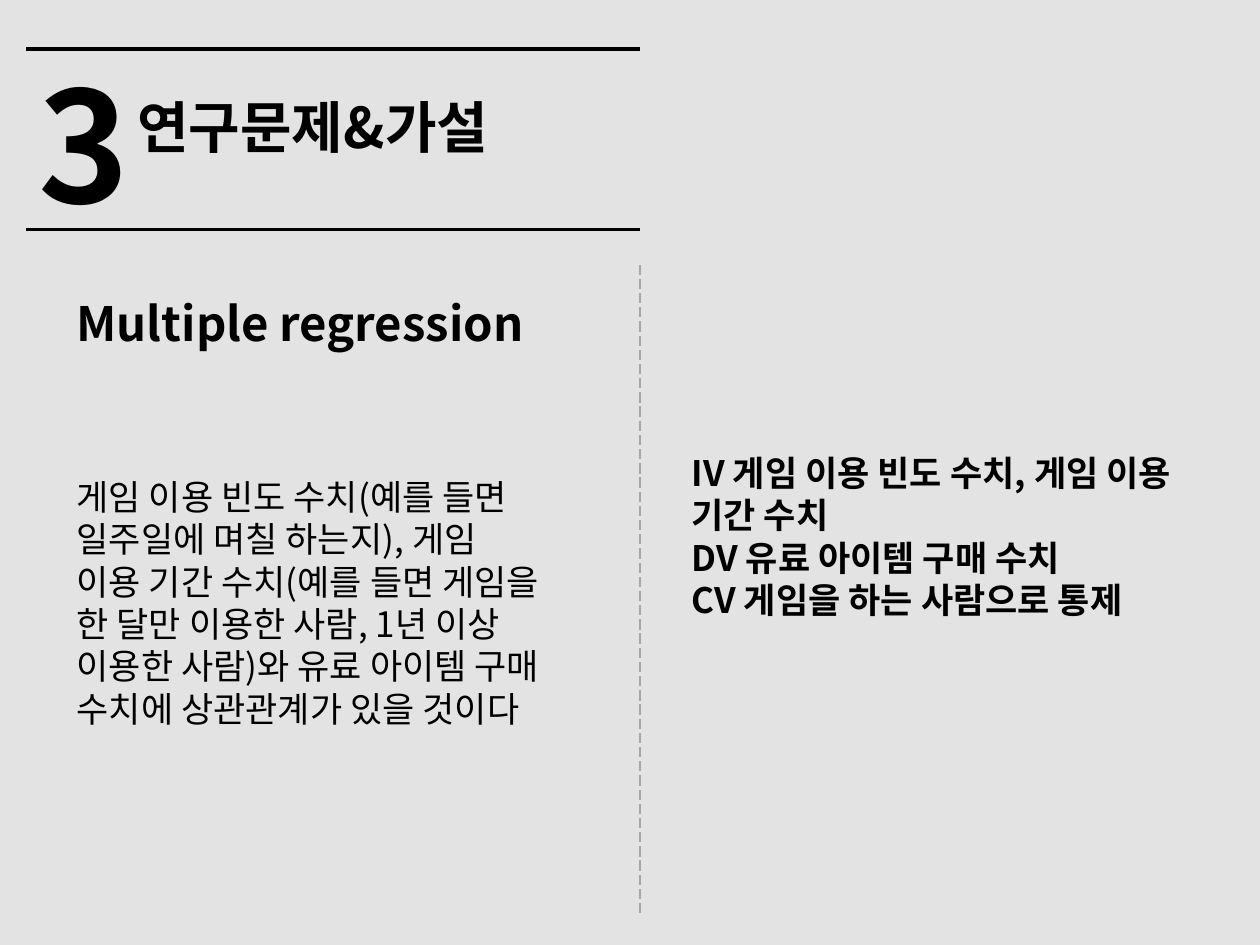
from typing import NamedTuple

from lxml import etree
from pptx import Presentation
from pptx import util as u
from pptx.dml.color import RGBColor
from pptx.enum import dml, shapes, text
from pptx.oxml.ns import qn

FONT = "Noto Sans CJK KR"
CELL = 0.1  # grid of 100 columns by 75 rows
COLS, ROWS = 100, 75
MIDDLE = 50.8
LEADING = 1.21


class Para(NamedTuple):
    words: str
    size: float
    bold: bool = True
    before: float = 0


class Block(NamedTuple):
    col: float
    row: float
    cols: float
    rows: float
    paras: list[Para]


class Rule(NamedTuple):
    start: tuple[float, float]
    end: tuple[float, float]
    color: str
    width: float
    dashed: bool = False


TITLE = Block(9.9, 6.8, 42.7, 6.4, [Para("연구문제&가설", 32)])
BLOCKS = [
    Block(2.1, 3.3, 8.3, 15.8, [Para("3", 88)]),
    Block(5.1, 22.8, 39.4, 39.2, [
        Para("Multiple regression", 27),
        Para("게임 이용 빈도 수치(예를 들면 일주일에 며칠 하는지), 게임 이용 기간 수치"
             "(예를 들면 게임을 한 달만 이용한 사람, 1년 이상 이용한 사람)와 유료 아이템 "
             "구매 수치에 상관관계가 있을 것이다", 20, bold=False, before=71),
    ]),
    Block(53.9, 35.3, 40.2, 17.8, [
        Para("IV 게임 이용 빈도 수치, 게임 이용 기간 수치", 20),
        Para("DV 유료 아이템 구매 수치", 20),
        Para("CV 게임을 하는 사람으로 통제", 20),
    ]),
]
RULES = [Rule((2.1, row), (MIDDLE, row), "000000", 2) for row in (3.9, 18.2)]
RULES.append(Rule((MIDDLE, 21), (MIDDLE, 72.5), "A6A6A6", 0.75, dashed=True))


def grid(cells: float) -> int:
    return u.Inches(cells * CELL)


def rgb(color: str) -> RGBColor:
    return RGBColor.from_string(color)


def fill_block(sp, block: Block) -> None:
    """Place a text shape on the grid and write its paragraphs."""
    sp.left, sp.top = grid(block.col), grid(block.row)
    sp.width, sp.height = grid(block.cols), grid(block.rows)
    tf = sp.text_frame
    tf.word_wrap = True
    tf.auto_size = text.MSO_AUTO_SIZE.NONE
    tf.vertical_anchor = text.MSO_ANCHOR.TOP
    for i, para in enumerate(block.paras):
        p = tf.add_paragraph() if i else tf.paragraphs[0]
        p.alignment = text.PP_ALIGN.LEFT
        p.line_spacing = u.Pt(round(para.size * LEADING, 1))
        p.space_before = u.Pt(para.before)
        r = p.add_run()
        r.text = para.words
        r.font.size, r.font.bold, r.font.name = u.Pt(para.size), para.bold, FONT
        r.font.color.rgb = rgb("000000")
        ea = etree.SubElement(r.font._element, qn("a:ea"))
        ea.set("typeface", FONT)


def draw_rule(slide, rule: Rule) -> None:
    ends = [grid(v) for v in (*rule.start, *rule.end)]
    line = slide.shapes.add_connector(shapes.MSO_CONNECTOR.STRAIGHT, *ends)
    line.line.color.rgb = rgb(rule.color)
    line.line.width = u.Pt(rule.width)
    if rule.dashed:
        line.line.dash_style = dml.MSO_LINE.LONG_DASH
    etree.SubElement(line._element.spPr, qn("a:effectLst"))


def main() -> None:
    prs = Presentation()
    prs.slide_width, prs.slide_height = grid(COLS), grid(ROWS)
    slide = prs.slides.add_slide(prs.slide_layouts[5])
    slide.background.fill.solid()
    slide.background.fill.fore_color.rgb = rgb("E3E3E3")
    for rule in RULES:
        draw_rule(slide, rule)
    fill_block(slide.shapes.title, TITLE)
    for block in BLOCKS:
        fill_block(slide.shapes.add_textbox(0, 0, 0, 0), block)
    prs.save("out.pptx")


if __name__ == "__main__":
    main()
